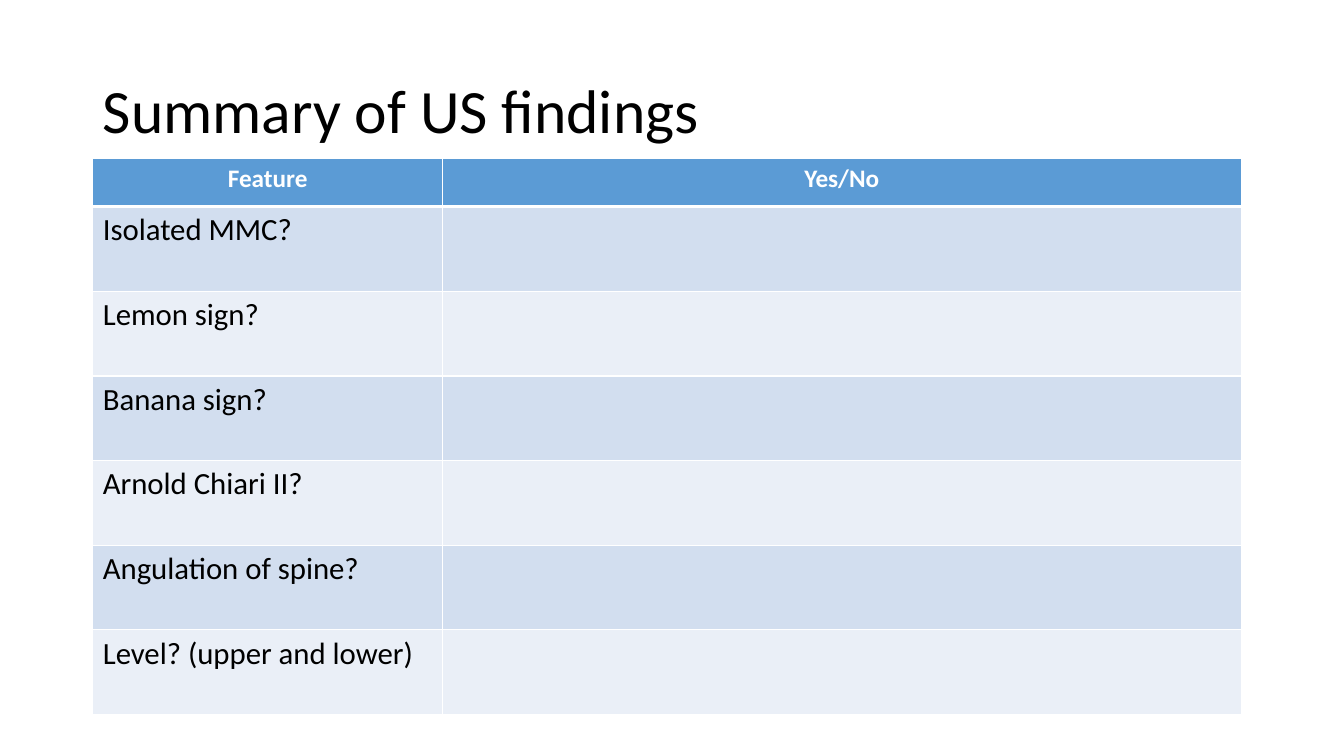
from lxml import etree
from pptx import Presentation
from pptx.dml.color import RGBColor
from pptx.enum import text
from pptx.oxml import ns
from pptx.util import Inches, Pt

COLORS = {
    "white": "FFFFFF",
    "black": "000000",
    "header": "5B9BD5",
    "odd": "D2DEEF",
    "even": "EAEFF7",
}
FONT = "Calibri"
HEADINGS = ["Feature", "Yes/No"]
FEATURES = [
    "Isolated MMC?",
    "Lemon sign?",
    "Banana sign?",
    "Arnold Chiari II?",
    "Angulation of spine?",
    "Level? (upper and lower)",
]


def color(name):
    return RGBColor.from_string(COLORS[name])


def add_run(paragraph, words, size, color_name, bold=False):
    run = paragraph.add_run()
    run.text = words
    run.font.name = FONT
    run.font.size = Pt(size)
    run.font.bold = bold
    run.font.color.rgb = color(color_name)


def set_borders(cell, top, bottom):
    properties = cell._tc.get_or_add_tcPr()
    widths = {"lnL": 1, "lnR": 1, "lnT": top, "lnB": bottom}
    for index, (side, width) in enumerate(widths.items()):
        line = etree.Element(ns.qn(f"a:{side}"), w=str(Pt(width)))
        fill = etree.SubElement(line, ns.qn("a:solidFill"))
        etree.SubElement(fill, ns.qn("a:srgbClr"), val=COLORS["white"])
        properties.insert(index, line)


def place_title(slide, left, top, width, height):
    title = slide.shapes.title
    title.left, title.top = Inches(left), Inches(top)
    title.width, title.height = Inches(width), Inches(height)
    title.text_frame.word_wrap = True
    title.text_frame.vertical_anchor = text.MSO_ANCHOR.MIDDLE
    paragraph = title.text_frame.paragraphs[0]
    paragraph.alignment = text.PP_ALIGN.LEFT
    paragraph.line_spacing = 0.9
    add_run(paragraph, "Summary of US findings", 44, "black")


def add_findings_table(slide, left, top, width, height):
    feature_width, header_height = 3.47, 0.48
    row_height = (height - header_height) / len(FEATURES)
    rows = [HEADINGS] + [[feature, ""] for feature in FEATURES]
    table = slide.shapes.add_table(
        len(rows), len(HEADINGS),
        Inches(left), Inches(top), Inches(width), Inches(height),
    ).table
    table.columns[0].width = Inches(feature_width)
    table.columns[1].width = Inches(width - feature_width)

    for row_index, values in enumerate(rows):
        is_header = row_index == 0
        table.rows[row_index].height = Inches(header_height if is_header else row_height)
        fill_name = "header" if is_header else "odd" if row_index % 2 else "even"
        for column_index, value in enumerate(values):
            cell = table.cell(row_index, column_index)
            cell.fill.solid()
            cell.fill.fore_color.rgb = color(fill_name)
            set_borders(cell, 3 if row_index == 1 else 1, 3 if is_header else 1)
            paragraph = cell.text_frame.paragraphs[0]
            if is_header:
                paragraph.alignment = text.PP_ALIGN.CENTER
                add_run(paragraph, value, 18, "white", True)
            elif value:
                add_run(paragraph, value, 22, "black")


def main():
    presentation = Presentation()
    presentation.slide_width = Inches(13.33)
    presentation.slide_height = Inches(7.5)
    slide = presentation.slides.add_slide(presentation.slide_layouts[5])
    place_title(slide, 0.92, 0.4, 11.5, 1.45)
    add_findings_table(slide, 0.92, 1.57, 11.39, 5.52)
    presentation.save("out.pptx")


if __name__ == "__main__":
    main()
